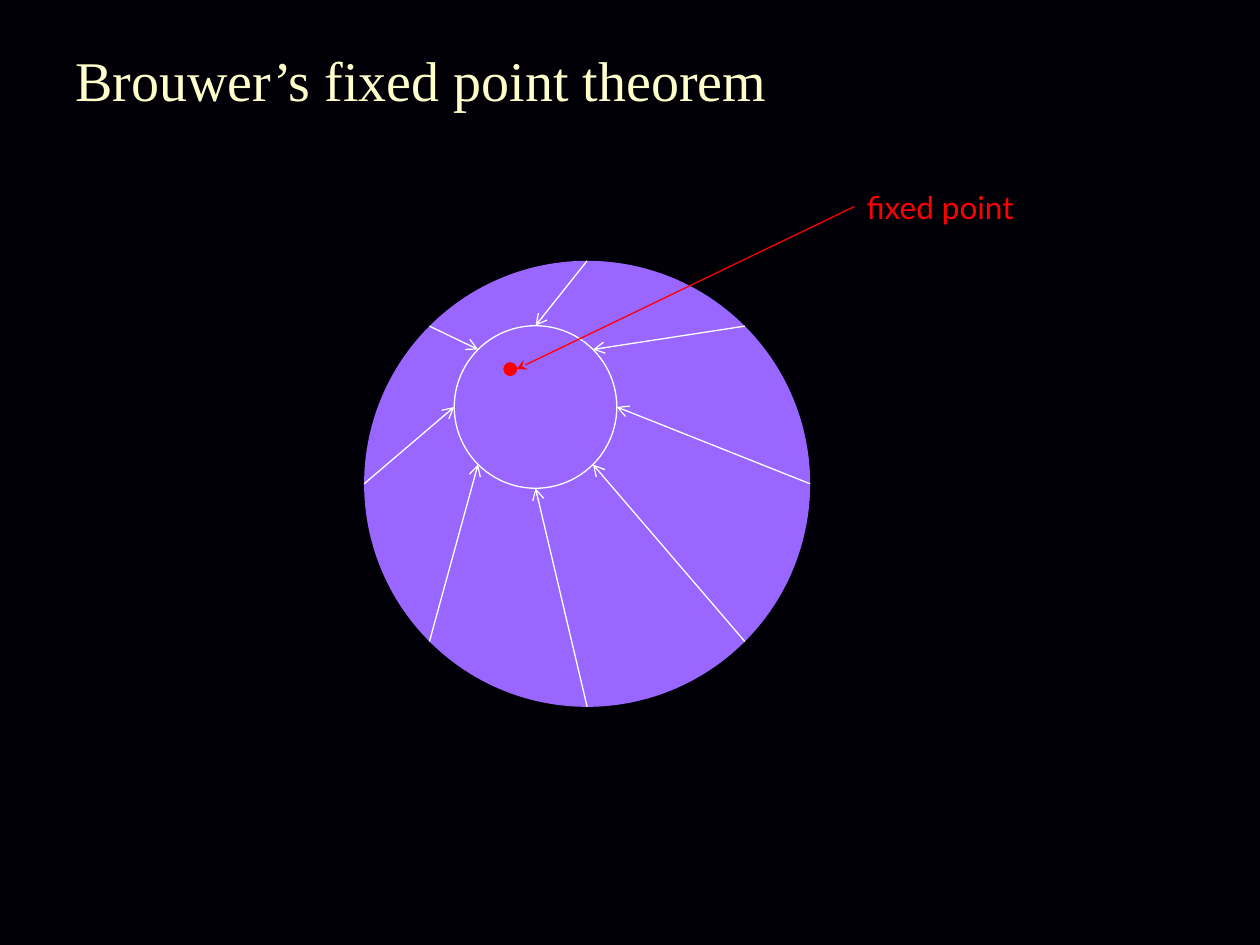
from math import cos, sin, pi
from pptx import Presentation
from pptx.dml.color import RGBColor
from pptx.enum.shapes import MSO_CONNECTOR as Conn, MSO_SHAPE as Shape
from pptx.enum.text import MSO_ANCHOR as Anchor, MSO_AUTO_SIZE as Fit
from pptx.oxml.ns import qn
from pptx.util import Inches, Pt
from lxml.etree import SubElement


def paint(fmt, color):
    fmt.solid()
    fmt.fore_color.rgb = RGBColor.from_string(color)


class Board:
    dark, disc, pale, white, red = "010006", "9966FF", "FFFFCC", "FFFFFF", "FF0000"
    thin = Pt(0.75)

    def __init__(self, deck):
        self.slide = deck.slides.add_slide(deck.slide_layouts[6])
        paint(self.slide.background.fill, self.dark)

    def circle(self, x, y, size, fill, line=None):
        box = [Inches(v) for v in (x - size / 2, y - size / 2, size, size)]
        shape = self.slide.shapes.add_shape(Shape.OVAL, *box)
        shape.shadow.inherit = False
        paint(shape.fill, fill)
        if line:
            paint(shape.line.fill, line)
            shape.line.width = self.thin
        else:
            shape.line.fill.background()
        return shape

    def text(self, words, box, font, size, color, **frame):
        shape = self.slide.shapes.add_textbox(*[Inches(v) for v in box])
        for key, value in frame.items():
            setattr(shape.text_frame, key, value)
        run = shape.text_frame.paragraphs[0].add_run()
        run.text = words
        for key, value in {"name": font, "size": Pt(size)}.items():
            setattr(run.font, key, value)
        paint(run.font.fill, color)
        return shape

    def arrow(self, start, end, color, tip):
        ends = [Inches(v) for v in (*start, *end)]
        link = self.slide.shapes.add_connector(Conn.STRAIGHT, *ends)
        paint(link.line.fill, color)
        link.line.width = self.thin
        SubElement(link.line._get_or_add_ln(), qn("a:tailEnd"), type=tip)
        SubElement(link._element.spPr, qn("a:effectLst"))
        return link


def rim(x, y, size, turn):
    return x + size / 2 * cos(turn), y + size / 2 * sin(turn)


def main():
    deck = Presentation()
    deck.slide_width, deck.slide_height = Inches(10), Inches(7.5)
    board = Board(deck)
    outer, inner = (4.66, 3.84, 3.54), (4.25, 3.23, 1.29)
    board.circle(*outer, board.disc)
    board.circle(*inner, board.disc, board.white)
    board.text("Brouwer’s fixed point theorem", (0.5, 0, 6.52, 1.25),
               "Times New Roman", 32, board.pale,
               word_wrap=True, vertical_anchor=Anchor.MIDDLE)
    label = board.text("fixed point", (6.78, 1.44, 1.37, 0.4), "Lato", 18, board.red,
                       word_wrap=False, auto_size=Fit.SHAPE_TO_FIT_TEXT)
    link = board.arrow((6.78, 1.64), (4.1, 2.93), board.red, "stealth")
    link.begin_connect(label, 1)
    board.circle(4.05, 2.93, 0.1, board.red, board.red)
    for step in range(8):
        turn = step * pi / 4
        board.arrow(rim(*outer, turn), rim(*inner, turn), board.white, "arrow")
    deck.save("out.pptx")


if __name__ == "__main__":
    main()
